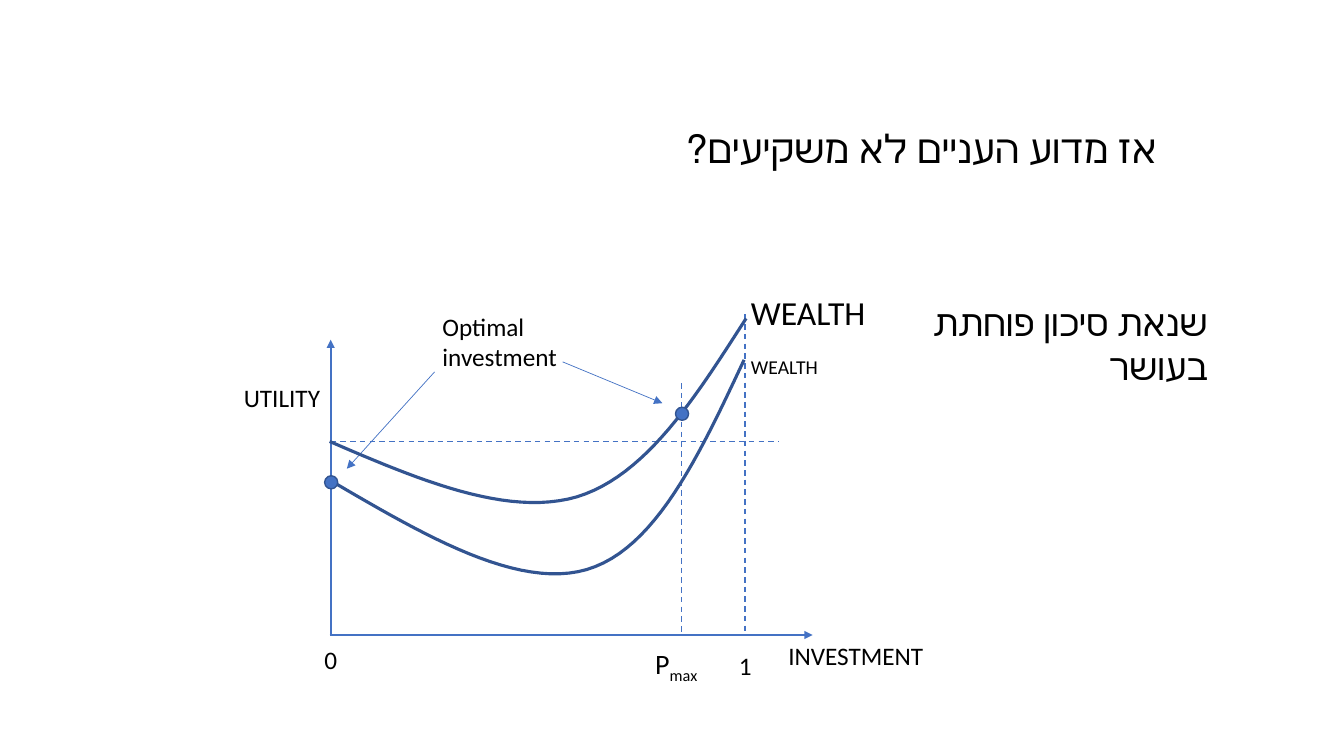
from dataclasses import dataclass

from lxml import etree
from pptx import Presentation
from pptx import util as u
from pptx.dml.color import RGBColor
from pptx.enum import dml, shapes, text
from pptx.oxml import ns

PX = 9144
STEPS = 24
BLUE = RGBColor(0x44, 0x72, 0xC4)
NAVY = RGBColor(0x32, 0x54, 0x91)
BLACK = RGBColor(0, 0, 0)
Point = tuple[int, int]


@dataclass
class Line:
    start: Point
    end: Point
    width: float
    dash: bool = False
    arrow: bool = False


@dataclass
class Label:
    words: str
    box: tuple[int, int, int, int]
    size: int
    sub: str = ""
    rtl: bool = False


LINES = [
    Line((327, 630), (806, 630), 1.5, arrow=True),
    Line((328, 630), (328, 337), 1.5, arrow=True),
    Line((328, 438), (772, 438), 1, dash=True),
    Line((739, 312), (739, 630), 1, dash=True),
    Line((676, 380), (676, 629), 1, dash=True),
    Line((558, 359), (657, 400), 0.5, arrow=True),
    Line((431, 369), (344, 465), 0.5, arrow=True),
]
CURVES: list[list[Point]] = [
    [(327, 438), (415, 476), (503, 513), (572, 493), (641, 472), (690, 394), (740, 316)],
    [(330, 478), (422, 532), (514, 585), (582, 565), (650, 545), (694, 451), (738, 357)],
]
DOTS: list[Point] = [(676, 410), (328, 478)]
LABELS = [
    Label("INVESTMENT", (772, 630, 160, 40), 18),
    Label("UTILITY", (232, 374, 160, 40), 18),
    Label("1", (723, 640, 40, 40), 18),
    Label("0", (312, 634, 40, 40), 18),
    Label("P", (640, 636, 73, 44), 20, sub="max"),
    Label("WEALTH", (735, 347, 219, 34), 14),
    Label("WEALTH", (735, 285, 222, 50), 24),
    Label("Optimal investment", (429, 304, 150, 71), 18),
    Label("אז מדוע העניים לא משקיעים?", (225, 118, 932, 57), 28, rtl=True),
    Label("שנאת סיכון פוחתת בעושר", (844, 293, 364, 98), 26, rtl=True),
]


def style(item: object, values: dict[str, object]) -> None:
    for key, value in values.items():
        setattr(item, key, value)


def draw_line(tree, line: Line) -> None:
    ends = [n * PX for n in line.start + line.end]
    link = tree.add_connector(shapes.MSO_CONNECTOR.STRAIGHT, *ends)
    link.line.color.rgb = BLUE
    link.line.width = u.Pt(line.width)
    if line.dash:
        link.line.dash_style = dml.MSO_LINE.DASH
    if line.arrow:
        etree.SubElement(link.line._get_or_add_ln(), ns.qn("a:tailEnd"), type="triangle")
    etree.SubElement(link._element.spPr, ns.qn("a:effectLst"))


def trace(knots: list[Point]) -> list[tuple[float, float]]:
    points = []
    for first in range(0, len(knots) - 1, 3):
        for step in range(STEPS + 1):
            t = step / STEPS
            s = 1 - t
            mix = (s**3, 3 * s * s * t, 3 * s * t * t, t**3)
            x, y = (sum(m * k[axis] for m, k in zip(mix, knots[first:first + 4])) for axis in (0, 1))
            points.append((x * PX, y * PX))
    return points


def draw_curve(tree, knots: list[Point]) -> None:
    start, *rest = trace(knots)
    pen = tree.build_freeform(*start)
    pen.add_line_segments(rest, close=False)
    curve = pen.convert_to_shape()
    curve.shadow.inherit = False
    curve.fill.background()
    curve.line.color.rgb = NAVY
    curve.line.width = u.Pt(2.25)


def draw_dot(tree, spot: Point) -> None:
    x, y = spot
    dot = tree.add_shape(shapes.MSO_SHAPE.OVAL, *(n * PX for n in (x - 6, y - 6, 13, 13)))
    dot.shadow.inherit = False
    dot.fill.solid()
    dot.fill.fore_color.rgb = BLUE
    dot.line.color.rgb = NAVY
    dot.line.width = u.Pt(1)


def draw_label(tree, label: Label) -> None:
    frame = tree.add_textbox(*(n * PX for n in label.box)).text_frame
    style(frame, {"word_wrap": True, "auto_size": text.MSO_AUTO_SIZE.SHAPE_TO_FIT_TEXT})
    para = frame.paragraphs[0]
    if label.rtl:
        para.alignment = text.PP_ALIGN.RIGHT
        para._p.get_or_add_pPr().set("rtl", "1")
    for words in filter(None, (label.words, label.sub)):
        run = para.add_run()
        run.text = words
        style(run.font, {"name": "Calibri", "size": u.Pt(label.size)})
        run.font.color.rgb = BLACK
        if words == label.sub:
            run._r.get_or_add_rPr().set("baseline", "-25000")


def main() -> None:
    deck = Presentation()
    style(deck, {"slide_width": u.Emu(1333 * PX), "slide_height": u.Emu(750 * PX)})
    tree = deck.slides.add_slide(deck.slide_layouts[6]).shapes
    for draw, items in (
        (draw_line, LINES),
        (draw_curve, CURVES),
        (draw_dot, DOTS),
        (draw_label, LABELS),
    ):
        for item in items:
            draw(tree, item)
    deck.save("out.pptx")


if __name__ == "__main__":
    main()
